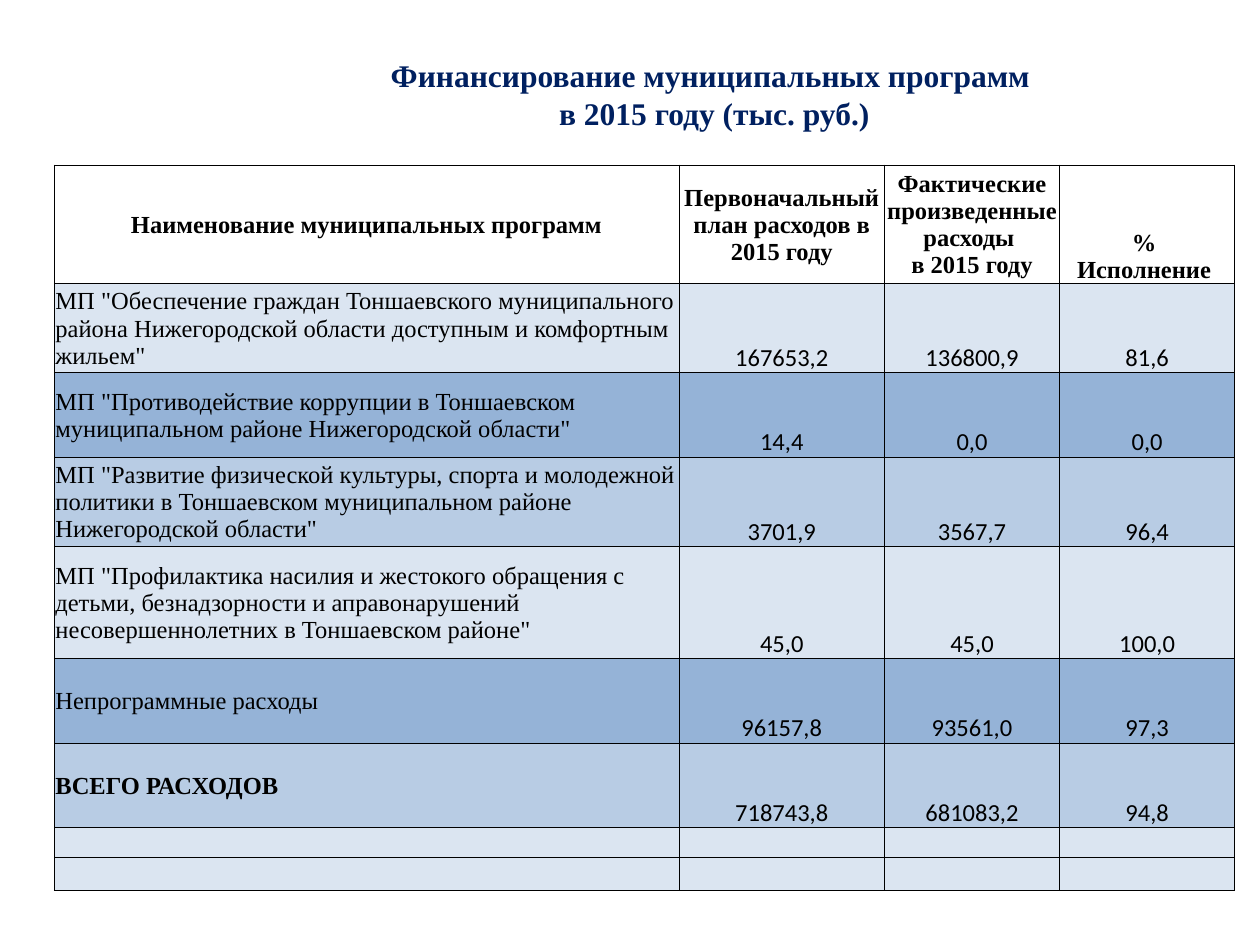
from lxml import etree
from pptx import Presentation
from pptx.dml.color import RGBColor
from pptx.enum.text import MSO_ANCHOR, MSO_AUTO_SIZE, PP_ALIGN
from pptx.oxml.ns import qn
from pptx.util import Inches, Pt

"""Builds the slide on the financing of municipal programmes in 2015."""

CENTER, LEFT = PP_ALIGN.CENTER, PP_ALIGN.LEFT
MIDDLE, BOTTOM = MSO_ANCHOR.MIDDLE, MSO_ANCHOR.BOTTOM
NO_AUTOFIT = MSO_AUTO_SIZE.NONE
SERIF, SANS = "Times New Roman", "Calibri"
LIGHT, DARK, MEDIUM = "DBE5F1", "95B3D7", "B8CCE4"
COLUMN_WIDTHS = [4.96, 1.63, 1.39, 1.39]
ROW_HEIGHTS = [0.94, 0.71, 0.67, 0.71, 0.89, 0.67, 0.67, 0.24, 0.26]
ROW_FILLS = [None, LIGHT, DARK, MEDIUM, LIGHT, DARK, MEDIUM, LIGHT, LIGHT]
TOTAL_ROW = 6
ROWS = [
    ["Наименование муниципальных программ", "Первоначальный план расходов в 2015 году",
     "Фактические произведенные расходы \nв 2015 году", "% \nИсполнение "],
    ['МП "Обеспечение граждан Тоншаевского муниципального района Нижегородской области '
     'доступным и комфортным жильем"', "167653,2", "136800,9", "81,6"],
    ['МП "Противодействие коррупции в Тоншаевском муниципальном районе '
     'Нижегородской области"', "14,4", "0,0", "0,0"],
    ['МП "Развитие физической культуры, спорта и молодежной политики в Тоншаевском '
     'муниципальном районе Нижегородской области"', "3701,9", "3567,7", "96,4"],
    ['МП "Профилактика насилия и жестокого обращения с детьми, безнадзорности и '
     'аправонарушений несовершеннолетних в Тоншаевском районе"', "45,0", "45,0", "100,0"],
    ["Непрограммные расходы", "96157,8", "93561,0", "97,3"],
    ["ВСЕГО РАСХОДОВ", "718743,8", "681083,2", "94,8"],
    [""] * 4,
    [""] * 4,
]


def format_text(text_frame, alignment, name, size, color, bold):
    for paragraph in text_frame.paragraphs:
        paragraph.alignment = alignment
        for run in paragraph.runs:
            run.font.name = name
            run.font.size = Pt(size)
            run.font.bold = bold
            run.font.color.rgb = RGBColor.from_string(color)


def add_borders(cell):
    properties = cell._tc.get_or_add_tcPr()
    for side in ("a:lnL", "a:lnR", "a:lnT", "a:lnB"):
        line = etree.SubElement(properties, qn(side), w=str(Pt(0.5)))
        fill = etree.SubElement(line, qn("a:solidFill"))
        etree.SubElement(fill, qn("a:srgbClr"), val="000000")


presentation = Presentation()
presentation.slide_width, presentation.slide_height = Inches(10), Inches(7.5)
slide = presentation.slides.add_slide(presentation.slide_layouts[5])

title = slide.shapes.title
title.left, title.top = Inches(2.01), Inches(0.44)
title.width, title.height = Inches(7.32), Inches(0.61)
title_frame = title.text_frame
title_frame.text = "Финансирование муниципальных программ \nв 2015 году (тыс. руб.)"
title_frame.auto_size = NO_AUTOFIT
title_frame.word_wrap = True
title_frame.vertical_anchor = MIDDLE
title_frame.margin_left = title_frame.margin_right = 0
title_frame.margin_top = title_frame.margin_bottom = 0
format_text(title_frame, CENTER, SERIF, 18, "002060", True)

table = slide.shapes.add_table(
    len(ROWS), len(COLUMN_WIDTHS), Inches(0.43), Inches(1.31),
    Inches(sum(COLUMN_WIDTHS)), Inches(sum(ROW_HEIGHTS))).table
table.first_row = table.horz_banding = False
for column, width in zip(table.columns, COLUMN_WIDTHS):
    column.width = Inches(width)
for row, height in zip(table.rows, ROW_HEIGHTS):
    row.height = Inches(height)

for row_index, (texts, row_fill) in enumerate(zip(ROWS, ROW_FILLS)):
    for column_index, text in enumerate(texts):
        cell = table.cell(row_index, column_index)
        is_header, is_name = row_index == 0, column_index == 0
        cell.text = text
        cell.margin_left = cell.margin_right = cell.margin_top = Inches(0.01)
        cell.margin_bottom = 0
        is_middle = is_name or (is_header and column_index < 3)
        cell.vertical_anchor = MIDDLE if is_middle else BOTTOM
        format_text(cell.text_frame,
                    LEFT if is_name and not is_header else CENTER,
                    SERIF if is_name or is_header else SANS, 14, "000000",
                    is_header or (is_name and row_index == TOTAL_ROW))
        if not text:
            paragraph = cell.text_frame.paragraphs[0]
            etree.SubElement(paragraph._p, qn("a:endParaRPr"), sz="1000")
        add_borders(cell)
        if row_fill:
            cell.fill.solid()
            cell.fill.fore_color.rgb = RGBColor.from_string(row_fill)
        else:
            cell.fill.background()

presentation.save("out.pptx")
